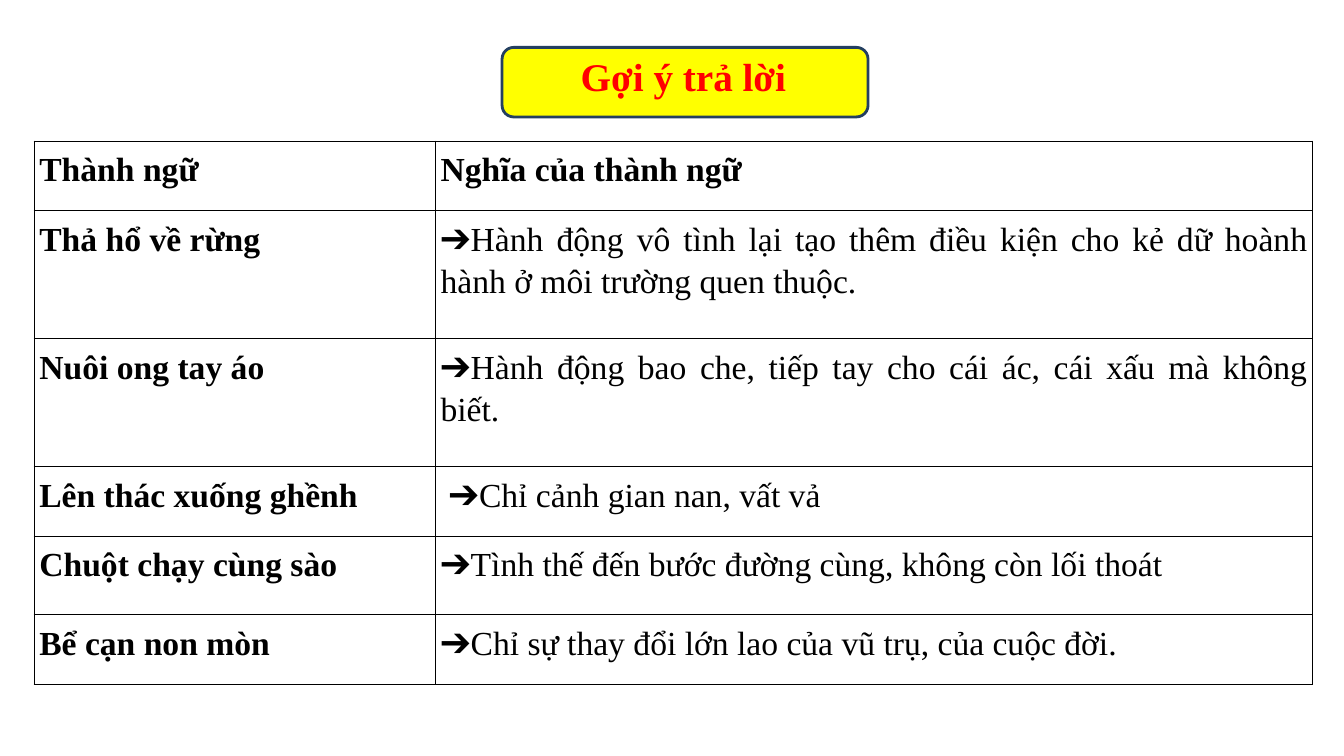
import pptx
import pptx.util
import pptx.oxml
import pptx.oxml.ns
import pptx.dml.color
import pptx.enum.shapes
import pptx.enum.text

Inches = pptx.util.Inches
Pt = pptx.util.Pt
align = pptx.enum.text.PP_ALIGN
anchor = pptx.enum.text.MSO_ANCHOR


def color(code):
    return pptx.dml.color.RGBColor.from_string(code)


def border(cell, side):
    """Draw a thin black line on one side (L, R, T or B) of a cell."""
    cell._tc.get_or_add_tcPr().append(pptx.oxml.parse_xml(
        f'<a:ln{side} {pptx.oxml.ns.nsdecls("a")} w="12700"><a:solidFill>'
        f'<a:srgbClr val="000000"/></a:solidFill></a:ln{side}>'))


deck = pptx.Presentation()
deck.slide_width = Inches(13.33)
deck.slide_height = Inches(7.5)
slide = deck.slides.add_slide(deck.slide_layouts[5])

# Yellow badge with the title on top of it
badge = slide.shapes.add_shape(
    pptx.enum.shapes.MSO_SHAPE.ROUNDED_RECTANGLE,
    Inches(4.98), Inches(0.47), Inches(3.63), Inches(0.69))
badge.shadow.inherit = False
badge.fill.solid()
badge.fill.fore_color.rgb = color("FFFF00")
badge.line.color.rgb = color("243F60")
badge.line.width = Pt(2)

title = slide.shapes.title
badge._element.addnext(title._element)
place = {"left": 5.66, "top": 0.47, "width": 2.85, "height": 0.57}
for name, value in place.items():
    setattr(title, name, Inches(value))
title.text = "Gợi ý trả lời"
frame = title.text_frame
frame.auto_size = pptx.enum.text.MSO_AUTO_SIZE.NONE
frame.vertical_anchor = anchor.TOP
head = frame.paragraphs[0]
head.alignment = align.LEFT
look = {"name": "Times New Roman", "size": Pt(28), "bold": True}
for name, value in look.items():
    setattr(head.font, name, value)
head.font.color.rgb = color("FF0000")

# Idioms and their meanings: row height, idiom, meaning
rows = [
    (0.69, "Thành ngữ", "Nghĩa của thành ngữ"),
    (1.27, "Thả hổ về rừng",
     "➔Hành động vô tình lại tạo thêm điều kiện cho kẻ dữ hoành hành ở môi trường quen thuộc."),
    (1.27, "Nuôi ong tay áo",
     "➔Hành động bao che, tiếp tay cho cái ác, cái xấu mà không biết."),
    (0.69, "Lên thác xuống ghềnh", " ➔Chỉ cảnh gian nan, vất vả"),
    (0.78, "Chuột chạy cùng sào", "➔Tình thế đến bước đường cùng, không còn lối thoát"),
    (0.69, "Bể cạn non mòn", "➔Chỉ sự thay đổi lớn lao của vũ trụ, của cuộc đời."),
]
table = slide.shapes.add_table(
    len(rows), 2, Inches(0.34), Inches(1.4), Inches(12.68), Inches(5.39)).table
table.first_row = False
table.horz_banding = False
for column, width in zip(table.columns, (3.98, 8.7)):
    column.width = Inches(width)

pads = ("margin_left", "margin_right", "margin_top", "margin_bottom")
for r, (height, *texts) in enumerate(rows):
    table.rows[r].height = Inches(height)
    for c, text in enumerate(texts):
        cell = table.cell(r, c)
        for pad in pads:
            setattr(cell, pad, Inches(0.05))
        for side in "LRTB":
            border(cell, side)
        cell.fill.background()
        cell.text = text
        para = cell.text_frame.paragraphs[0]
        para.alignment = align.JUSTIFY
        para.line_spacing = 1.15
        if c == 1 and r >= 4:
            para.space_after = Pt(3.6)
        look = {"name": "Times New Roman", "size": Pt(24), "bold": r == 0 or c == 0}
        for name, value in look.items():
            setattr(para.font, name, value)
        para.font.color.rgb = color("000000")

deck.save("out.pptx")
